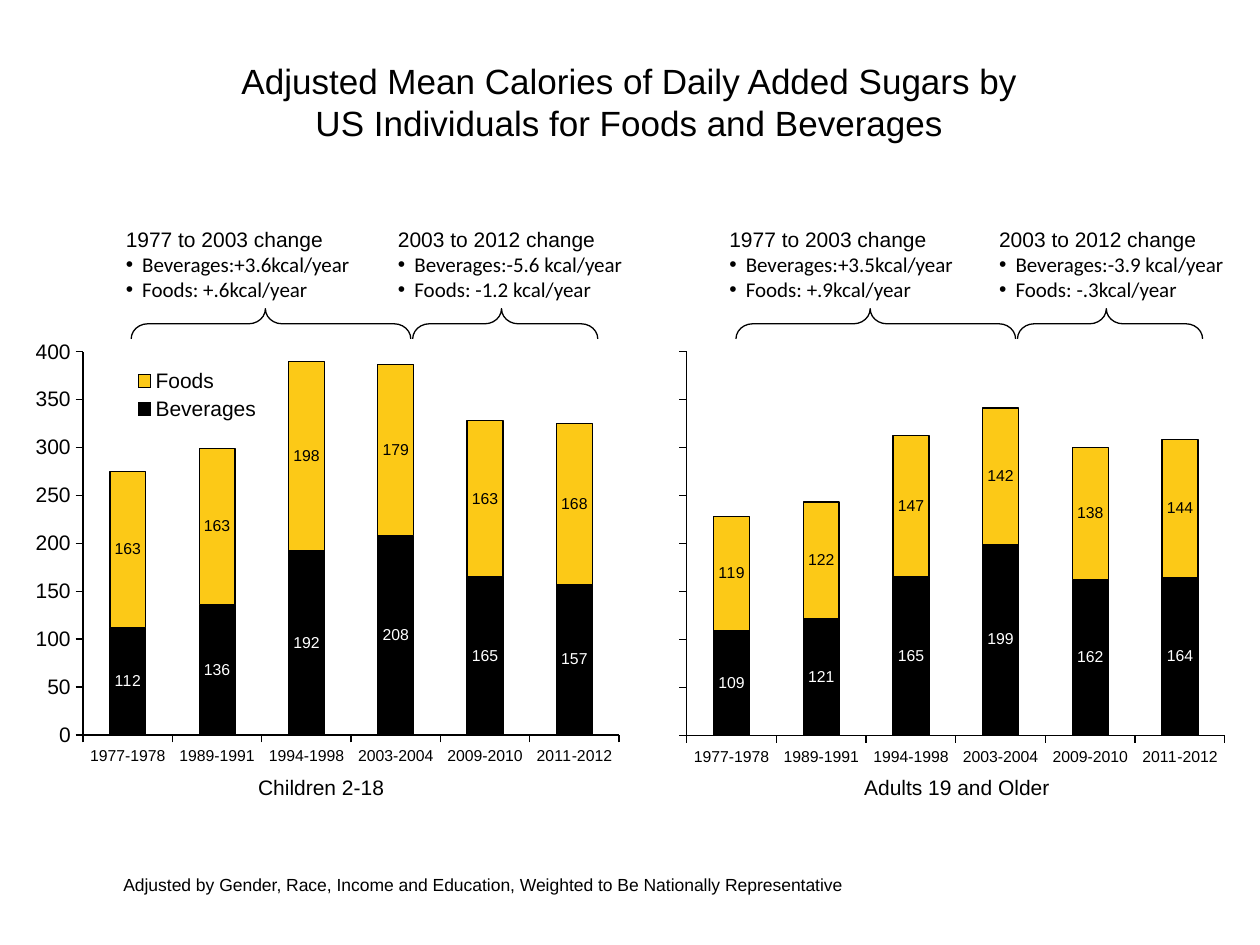
from lxml.etree import SubElement
from pptx import Presentation
from pptx.chart.data import CategoryChartData
from pptx.dml.color import RGBColor
from pptx.enum.chart import (XL_CHART_TYPE, XL_LABEL_POSITION, XL_LEGEND_POSITION,
                             XL_TICK_LABEL_POSITION, XL_TICK_MARK)
from pptx.enum.shapes import MSO_SHAPE
from pptx.enum.text import MSO_ANCHOR, PP_ALIGN
from pptx.oxml import parse_xml
from pptx.oxml.ns import nsdecls, qn
from pptx.util import Pt

BLACK, WHITE, YELLOW = "000000", "FFFFFF", "FCC917"
PERIODS = ["1977-1978", "1989-1991", "1994-1998", "2003-2004", "2009-2010", "2011-2012"]
GROUP_OFFSET = 345.6
INDENT = 9.4


def color(value):
    return RGBColor.from_string(value)


def format_font(font, size, name="Arial", fill=BLACK):
    font.size = Pt(size)
    font.name = name
    font.bold = False
    font.color.rgb = color(fill)


def format_line(line):
    line.color.rgb = color(BLACK)
    line.width = Pt(0.75)


def write_text(paragraph, text, size=12, name="Arial", align=None, hanging=False,
               bullet=False, spacing=None):
    properties = paragraph._p.get_or_add_pPr()
    if hanging:
        properties.set("marL", str(Pt(INDENT)))
        properties.set("indent", str(-Pt(INDENT)))
    if bullet:
        SubElement(properties, qn("a:buFont")).set("typeface", "Arial")
        SubElement(properties, qn("a:buChar")).set("char", "•")
    if spacing:
        paragraph.line_spacing = Pt(spacing)
    paragraph.alignment = align
    run = paragraph.add_run()
    run.text = text
    format_font(run.font, size, name)


def add_text_box(slide, left, top, width, height, wrap=False, anchor=MSO_ANCHOR.MIDDLE):
    shape = slide.shapes.add_textbox(Pt(left), Pt(top), Pt(width), Pt(height))
    shape.text_frame.word_wrap = wrap
    shape.text_frame.vertical_anchor = anchor
    return shape.text_frame


def add_title(slide, text):
    title = slide.shapes.title
    title.left, title.top, title.width, title.height = Pt(125.3), Pt(30.2), Pt(468.7), Pt(55.4)
    title.text_frame.vertical_anchor = MSO_ANCHOR.TOP
    write_text(title.text_frame.paragraphs[0], text, size=20, align=PP_ALIGN.CENTER, spacing=24)


def add_change_note(slide, left, width, heading, *changes):
    frame = add_text_box(slide, left, 125.3, width, 51.1)
    write_text(frame.paragraphs[0], heading, hanging=True)
    for change in changes:
        write_text(frame.add_paragraph(), change, name="Calibri", hanging=True, bullet=True)


def add_brace(slide, left, top, height):
    brace = slide.shapes.add_shape(MSO_SHAPE.RIGHT_BRACE, Pt(left), Pt(top), Pt(17.3), Pt(height))
    brace.rotation = 270
    brace.adjustments[0] = 0.55
    brace.adjustments[1] = 0.48
    brace.fill.background()
    brace.shadow.inherit = False
    format_line(brace.line)


def set_layout(element, index, x, y, width, height, inner=False):
    for old in element.findall(qn("c:layout")):
        element.remove(old)
    target = '<c:layoutTarget val="inner"/>' if inner else ""
    element.insert(index, parse_xml(
        f'<c:layout {nsdecls("c")}><c:manualLayout>{target}'
        '<c:xMode val="edge"/><c:yMode val="edge"/>'
        f'<c:x val="{x}"/><c:y val="{y}"/><c:w val="{width}"/><c:h val="{height}"/>'
        '</c:manualLayout></c:layout>'))


def format_axis(axis, size):
    axis.has_major_gridlines = False
    axis.major_tick_mark = XL_TICK_MARK.OUTSIDE
    axis.minor_tick_mark = XL_TICK_MARK.NONE
    format_line(axis.format.line)
    format_font(axis.tick_labels.font, size)


def add_sugar_chart(slide, box, plot_box, beverages, foods):
    data = CategoryChartData(number_format="0")
    data.categories = PERIODS
    data.add_series("Beverages", beverages)
    data.add_series("Foods", foods)
    chart = slide.shapes.add_chart(
        XL_CHART_TYPE.COLUMN_STACKED, *[Pt(length) for length in box], data).chart
    chart.has_title = False
    chart.has_legend = False
    format_font(chart.font, 10)
    format_axis(chart.category_axis, 9)
    format_axis(chart.value_axis, 12)
    chart.value_axis.minimum_scale = 0
    chart.value_axis.maximum_scale = 400
    chart.value_axis.major_unit = 50
    plot = chart.plots[0]
    plot.gap_width = 150
    plot.overlap = 100
    plot.vary_by_categories = False
    for series, fill, label_color in zip(plot.series, (BLACK, YELLOW), (WHITE, BLACK)):
        series.format.fill.solid()
        series.format.fill.fore_color.rgb = color(fill)
        format_line(series.format.line)
        labels = series.data_labels
        labels.show_value = True
        labels.position = XL_LABEL_POSITION.CENTER
        labels.number_format = "0"
        labels.number_format_is_linked = False
        format_font(labels.font, 9, fill=label_color)
    set_layout(chart._chartSpace.chart.plotArea, 0, *plot_box, inner=True)
    return chart


def add_legend(chart):
    chart.has_legend = True
    legend = chart.legend
    legend.position = XL_LEGEND_POSITION.RIGHT
    legend.include_in_layout = False
    format_font(legend.font, 12)
    set_layout(legend._element, 1, 0.15, 0.27, 0.2, 0.09)


def main():
    presentation = Presentation()
    presentation.slide_width, presentation.slide_height = Pt(720), Pt(540)
    slide = presentation.slides.add_slide(presentation.slide_layouts[5])
    add_title(slide, "Adjusted Mean Calories of Daily Added Sugars by "
                     "US Individuals for Foods and Beverages")

    children = add_sugar_chart(
        slide, (15.1, 102.2, 390.2, 392.4), (0.083, 0.252, 0.785, 0.558),
        (112, 136, 192, 208, 165, 157), (163, 163, 198, 179, 163, 168))
    add_legend(children)
    adults = add_sugar_chart(
        slide, (361.4, 77.8, 373.7, 391.7), (0.083, 0.314, 0.823, 0.56),
        (109, 121, 165, 199, 162, 164), (119, 122, 147, 142, 138, 144))
    adults.value_axis.tick_label_position = XL_TICK_LABEL_POSITION.NONE

    for offset in (0, GROUP_OFFSET):
        add_brace(slide, 146.2 + offset, 105.1, 159.8)
        add_brace(slide, 280.1 + offset, 132.1, 105.8)

    early, late = "1977 to 2003 change", "2003 to 2012 change"
    add_change_note(slide, 64.8, 154.1, early, "Beverages:+3.6kcal/year", "Foods: +.6kcal/year")
    add_change_note(slide, 220.3, 144.7, late, "Beverages:-5.6 kcal/year", "Foods: -1.2 kcal/year")
    add_change_note(slide, 409.7, 158.4, early, "Beverages:+3.5kcal/year", "Foods: +.9kcal/year")
    add_change_note(slide, 563.8, 154.8, late, "Beverages:-3.9 kcal/year", "Foods: -.3kcal/year")

    for left, width, text in ((140.4, 87.1, "Children 2-18"), (486.7, 121.7, "Adults 19 and Older")):
        frame = add_text_box(slide, left, 439.2, width, 21.6)
        write_text(frame.paragraphs[0], text, hanging=True)

    footnote = add_text_box(slide, 63.4, 496.1, 470.2, 42.5, wrap=True, anchor=MSO_ANCHOR.TOP)
    write_text(footnote.paragraphs[0], "Adjusted by Gender, Race, Income and Education, "
                                       "Weighted to Be Nationally Representative", size=10)
    presentation.save("out.pptx")


if __name__ == "__main__":
    main()
